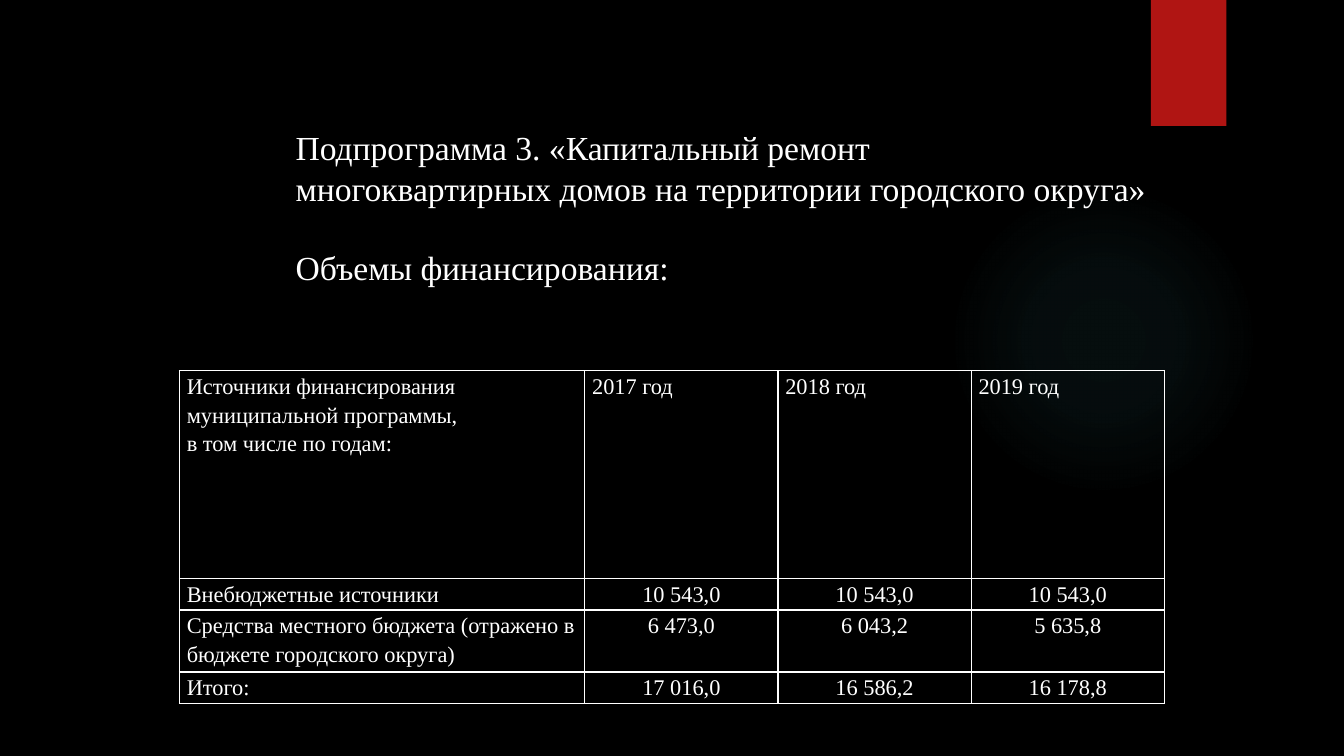
"""Builds a slide with the funding table of a housing repair subprogramme."""
from dataclasses import dataclass

from pptx import Presentation
from pptx.dml.color import RGBColor
from pptx.enum.shapes import MSO_SHAPE
from pptx.enum.text import MSO_ANCHOR, PP_ALIGN
from pptx.oxml import parse_xml
from pptx.oxml.ns import nsdecls
from pptx.util import Emu, Pt


@dataclass(frozen=True)
class Theme:
    """Colours, font and type sizes of the slide."""
    background: str = "000000"
    text: str = "FFFFFF"
    accent: str = "B01513"
    glow: str = "50B9C1"
    font: str = "Times New Roman"
    title_size: int = 24
    table_size: int = 16


THEME = Theme()
EMU_PER_PX = 9525
COLUMNS = [386, 184, 184, 184]
ROWS = [198, 30, 59, 30]
FUNDING = [
    ["Источники финансирования муниципальной программы,\nв том числе по годам:",
     "2017 год", "2018 год", "2019 год"],
    ["Внебюджетные источники", "10 543,0", "10 543,0", "10 543,0"],
    ["Средства местного бюджета (отражено в бюджете городского округа)",
     "6 473,0", "6 043,2", "5 635,8"],
    ["Итого:", "17 016,0", "16 586,2", "16 178,8"],
]
TITLE = [
    "Подпрограмма 3. «Капитальный ремонт",
    "многоквартирных домов на территории городского округа»",
    "Объемы финансирования:",
]


def px(n):
    """Turn pixels into EMU."""
    return Emu(n * EMU_PER_PX)


def box(*lengths):
    """Turn left, top, width and height into EMU."""
    return [px(n) for n in lengths]


def style(p, size):
    """Set the font of a paragraph."""
    p.font.name = THEME.font
    p.font.size = Pt(size)
    p.font.color.rgb = RGBColor.from_string(THEME.text)


def add_plain_shape(slide, kind, *lengths):
    """Add a shape without line or shadow."""
    sp = slide.shapes.add_shape(kind, *box(*lengths))
    sp.shadow.inherit = False
    sp.line.fill.background()
    return sp


def add_glow(slide, *lengths):
    """Add a circle that fades out towards its edge."""
    sp = add_plain_shape(slide, MSO_SHAPE.OVAL, *lengths)
    stops = "".join(
        f'<a:gs pos="{pos * 1000}"><a:srgbClr val="{THEME.glow}">'
        f'<a:alpha val="{alpha * 1000}"/></a:srgbClr></a:gs>'
        for pos, alpha in [(0, 7), (36, 6), (69, 0)])
    grad = parse_xml(
        f'<a:gradFill {nsdecls("a")} rotWithShape="1"><a:gsLst>{stops}</a:gsLst>'
        '<a:path path="circle"><a:fillToRect l="50000" t="50000" r="50000" '
        'b="50000"/></a:path></a:gradFill>')
    sp._element.spPr.prstGeom.addnext(grad)


def add_tab(slide, *lengths):
    """Add the accent rectangle."""
    sp = add_plain_shape(slide, MSO_SHAPE.RECTANGLE, *lengths)
    sp.fill.solid()
    sp.fill.fore_color.rgb = RGBColor.from_string(THEME.accent)


def add_title(slide, lines, *lengths):
    """Add the heading, with its last line set apart."""
    tf = slide.shapes.add_textbox(*box(*lengths)).text_frame
    tf.word_wrap = True
    tf.vertical_anchor = MSO_ANCHOR.MIDDLE
    tf.text = "\n".join(lines)
    for p in tf.paragraphs:
        style(p, THEME.title_size)
    tf.paragraphs[-1].space_before = Pt(28)


def add_borders(cell):
    """Draw a thin line on each side of a cell."""
    tc_pr = cell._tc.get_or_add_tcPr()
    for side in "LRTB":
        tc_pr.append(parse_xml(
            f'<a:ln{side} {nsdecls("a")} w="{Pt(1)}"><a:solidFill>'
            f'<a:srgbClr val="{THEME.text}"/></a:solidFill></a:ln{side}>'))


def fill_cell(cell, text, align):
    """Write and format one table cell."""
    add_borders(cell)
    cell.fill.background()
    cell.margin_left = cell.margin_right = px(7)
    cell.margin_top = cell.margin_bottom = 0
    cell.text = text
    for p in cell.text_frame.paragraphs:
        p.alignment = align
        p.line_spacing = 1.15
        style(p, THEME.table_size)


def add_funding_table(slide, left, top):
    """Add the table of funding by source and year."""
    frame = slide.shapes.add_table(
        len(ROWS), len(COLUMNS), *box(left, top, sum(COLUMNS), sum(ROWS)))
    table = frame.table
    table.first_row = table.horz_banding = False
    for column, width in zip(table.columns, COLUMNS):
        column.width = px(width)
    for row, height in zip(table.rows, ROWS):
        row.height = px(height)
    for i, values in enumerate(FUNDING):
        for j, text in enumerate(values):
            align = PP_ALIGN.CENTER if i and j else PP_ALIGN.LEFT
            fill_cell(table.cell(i, j), text, align)


def main():
    """Build and save the slide."""
    prs = Presentation()
    prs.slide_width, prs.slide_height = px(1280), px(720)
    slide = prs.slides.add_slide(prs.slide_layouts[6])
    slide.background.fill.solid()
    slide.background.fill.fore_color.rgb = RGBColor.from_string(THEME.background)
    add_glow(slide, 903, 176, 296, 296)
    add_tab(slide, 1096, 0, 72, 120)
    add_funding_table(slide, 171, 353)
    add_title(slide, TITLE, 272, 116, 909, 163)
    prs.save("out.pptx")


if __name__ == "__main__":
    main()
